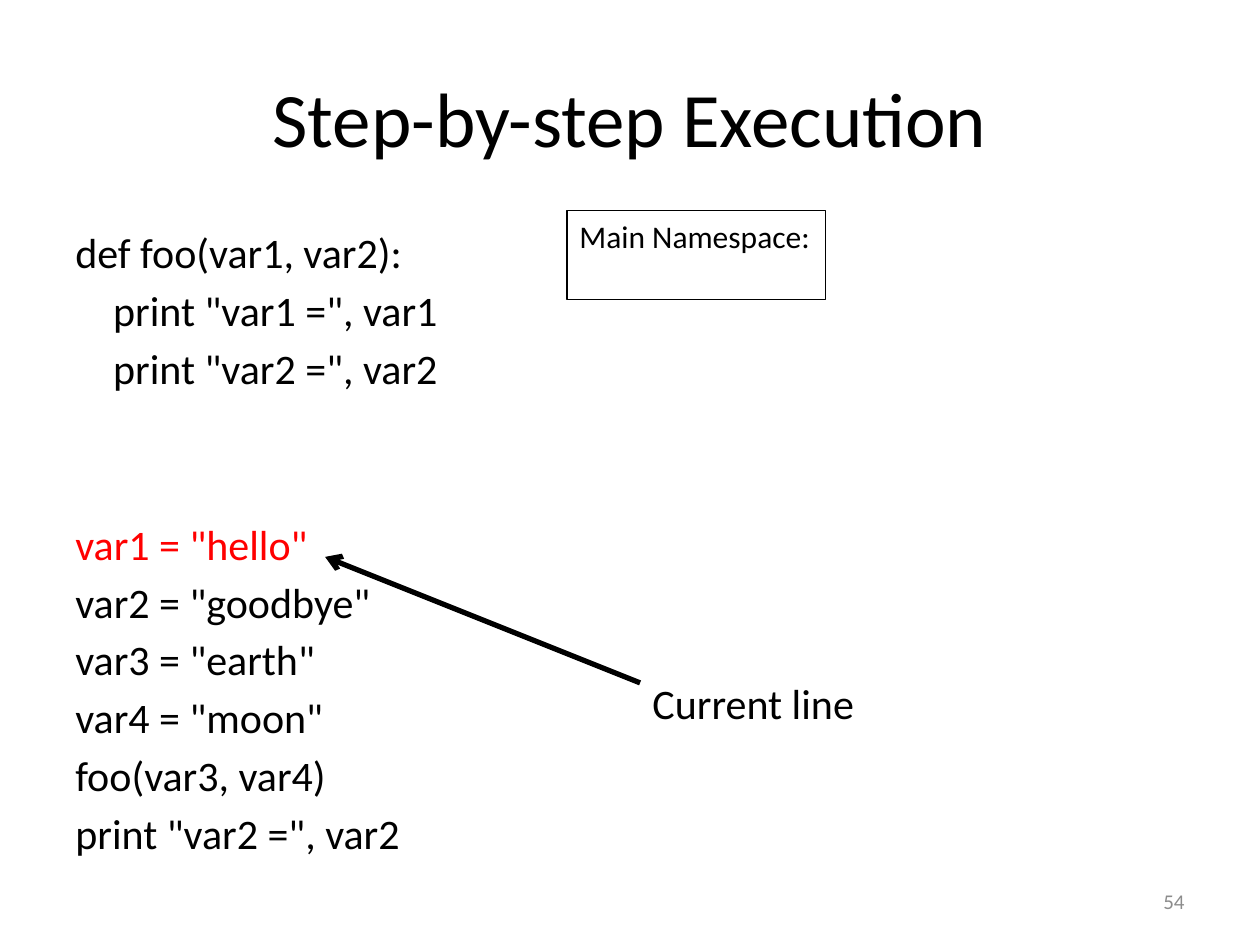
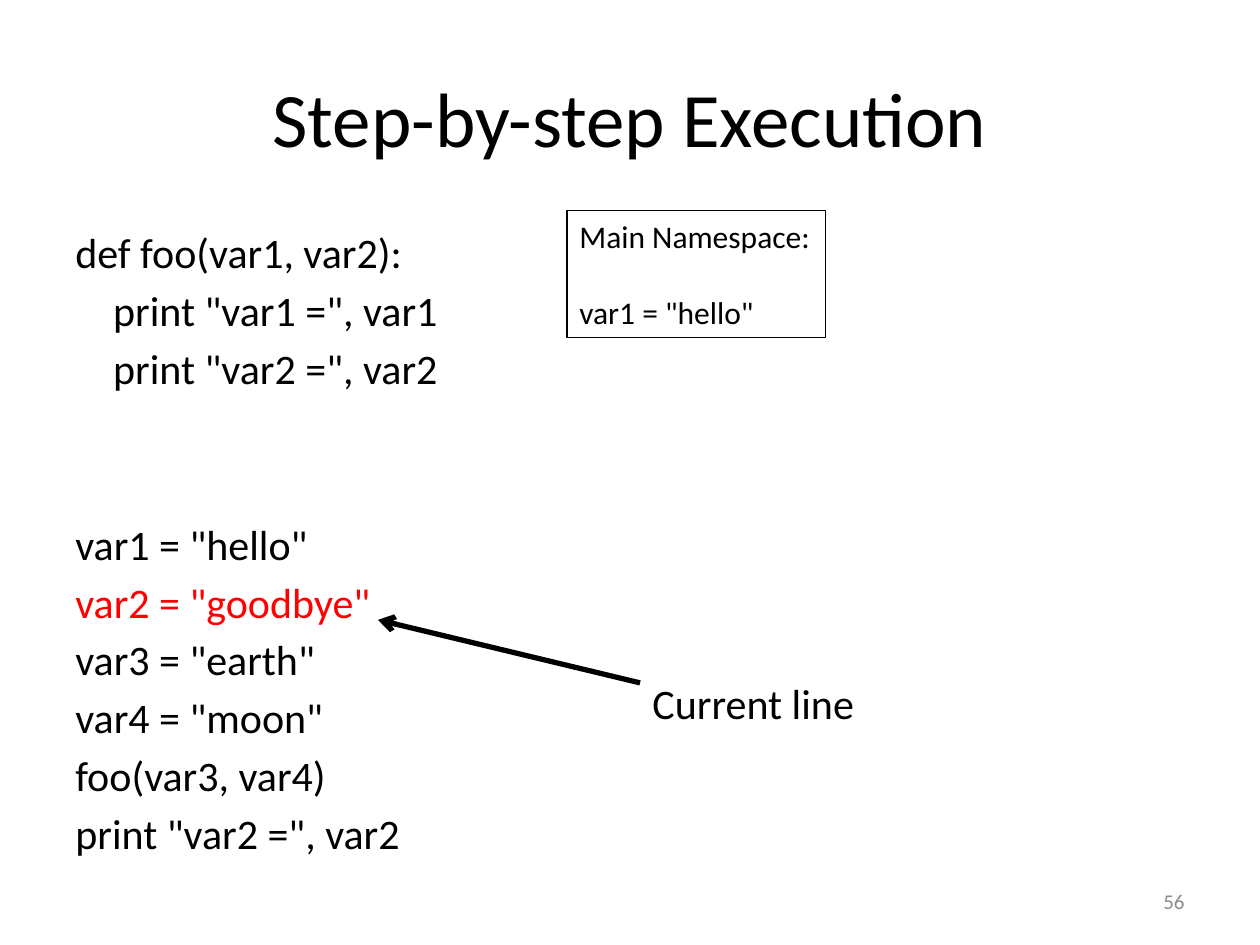
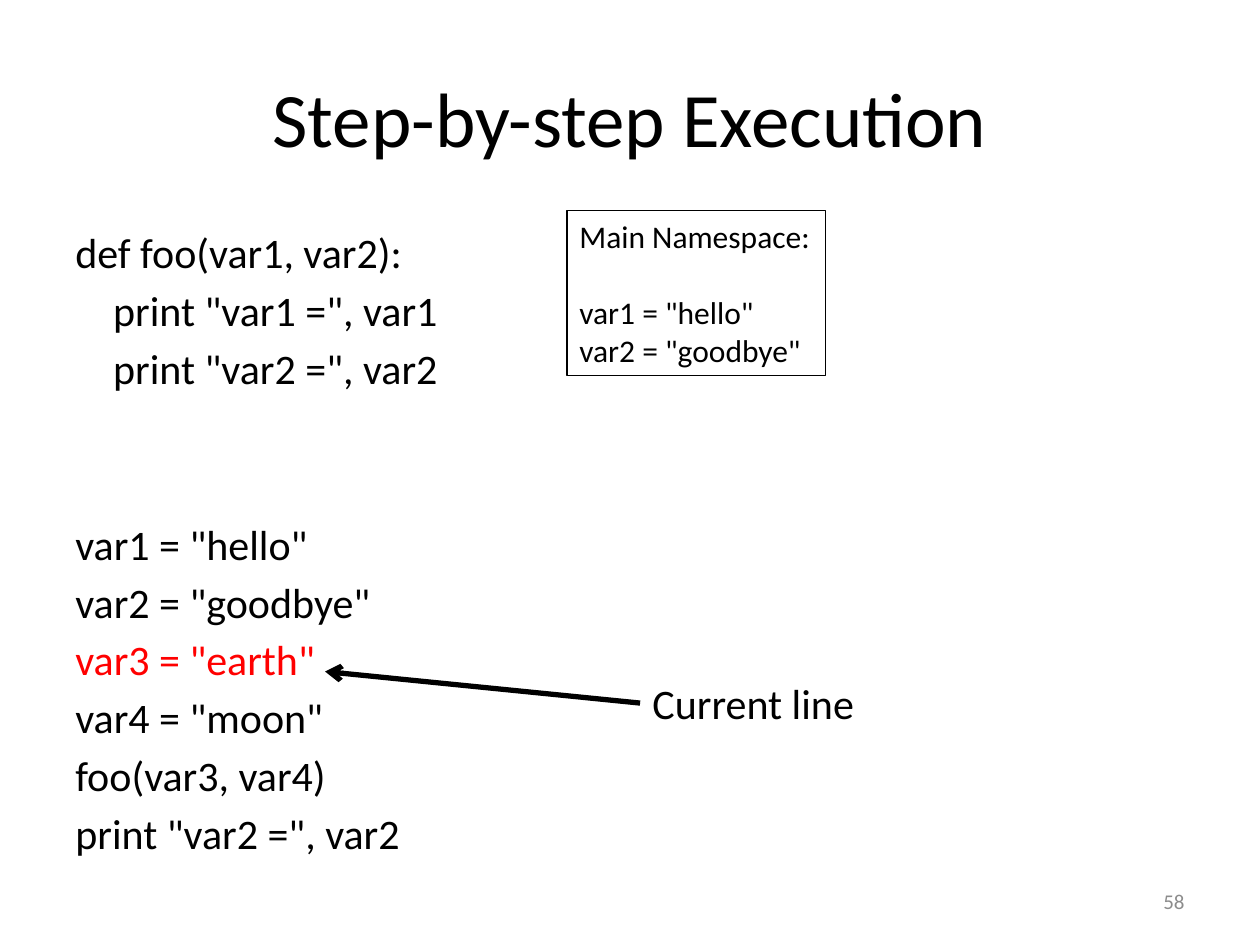
"""Build three slides that trace a short program line by line."""
from dataclasses import dataclass

from lxml import etree
from pptx import Presentation
from pptx.dml.color import RGBColor
from pptx.enum.shapes import MSO_CONNECTOR, MSO_SHAPE
from pptx.enum.text import MSO_ANCHOR, PP_ALIGN
from pptx.oxml.ns import qn
from pptx.shapes.base import BaseShape
from pptx.slide import Slide
from pptx.util import Inches, Pt

LEFT, CENTER, RIGHT = PP_ALIGN.LEFT, PP_ALIGN.CENTER, PP_ALIGN.RIGHT
TOP, MIDDLE = MSO_ANCHOR.TOP, MSO_ANCHOR.MIDDLE
RECT = MSO_SHAPE.RECTANGLE
STRAIGHT = MSO_CONNECTOR.STRAIGHT

COLORS = {"ink": "000000", "mark": "FF0000", "page": "8C8C8C"}
FONT = "Calibri"
GAP = 4.3
PITCH = 33.6


@dataclass(frozen=True)
class Line:
    text: str
    color: str = "ink"
    before: float = 0
    after: float = 0
    indent: float = 0


@dataclass(frozen=True)
class Block:
    at: tuple[float, float, float, float]
    size: int
    align: PP_ALIGN = LEFT
    anchor: MSO_ANCHOR = TOP
    wrap: bool = True


@dataclass(frozen=True)
class Step:
    page: int
    line: int
    names: tuple[str, ...]
    tip: tuple[float, float]
    joined: bool = False


TITLE = Block((0.5, 0.3, 9, 1.25), 44, CENTER, MIDDLE)
CODE = Block((0.5, 1.75, 9, 4.95), 24)
PAGE = Block((7.17, 6.95, 2.33, 0.4), 12, RIGHT, MIDDLE)
LABEL = Block((5.08, 5.33, 1.82, 0.5), 24, wrap=False)
START = (5.08, 5.42)

SOURCE = (
    Line("def foo(var1, var2):", before=GAP),
    Line('print "var1 =", var1', before=GAP, indent=0.3),
    Line('print "var2 =", var2', before=GAP, indent=0.3),
    Line('var1 = "hello"', before=GAP + 2 * PITCH),
    Line('var2 = "goodbye"', before=GAP),
    Line('var3 = "earth"', before=GAP),
    Line('var4 = "moon"', before=GAP),
    Line("foo(var3, var4)", before=GAP),
    Line('print "var2 =", var2', before=GAP),
)

STEPS = (
    Step(54, 3, (), (2.58, 4.42)),
    Step(56, 4, ('var1 = "hello"',), (3, 4.92)),
    Step(58, 5, ('var1 = "hello"', 'var2 = "goodbye"'), (2.58, 5.33), True),
)


def paint(name: str) -> RGBColor:
    """Return a named colour."""
    return RGBColor.from_string(COLORS[name])


def apply(target: object, values: dict[str, object]) -> None:
    """Set each format value on the target."""
    for name, value in values.items():
        setattr(target, name, value)


def write(shape: BaseShape, block: Block, lines: list[Line]) -> None:
    """Fill a shape with styled lines."""
    frame = shape.text_frame
    apply(frame, {"word_wrap": block.wrap, "vertical_anchor": block.anchor})
    for i, line in enumerate(lines):
        para = frame.paragraphs[0] if i == 0 else frame.add_paragraph()
        apply(para, {
            "alignment": block.align,
            "space_before": Pt(line.before),
            "space_after": Pt(line.after),
        })
        if line.indent:
            para._p.get_or_add_pPr().set("marL", str(Inches(line.indent)))
        run = para.add_run()
        run.text = line.text
        apply(run.font, {"name": FONT, "size": Pt(block.size)})
        run.font.color.rgb = paint(line.color)


def put(slide: Slide, block: Block, lines: list[Line]) -> BaseShape:
    """Add a text box."""
    box = slide.shapes.add_textbox(*map(Inches, block.at))
    write(box, block, lines)
    return box


def frame_names(slide: Slide, names: tuple[str, ...]) -> None:
    """Add the outlined box that lists the namespace."""
    rows = max(2, len(names) + 2)
    block = Block((4.5, 1.67, 2.05, 0.11 + 0.3 * rows), 18)
    box = slide.shapes.add_shape(RECT, *map(Inches, block.at))
    box.shadow.inherit = False
    box.fill.background()
    box.line.color.rgb = paint("ink")
    box.line.width = Pt(0.75)
    head = Line("Main Namespace:", after=22)
    write(box, block, [head, *map(Line, names)])


def point(slide: Slide, step: Step, label: BaseShape) -> None:
    """Draw the arrow from the label to the current line."""
    ends = map(Inches, (*START, *step.tip))
    arrow = slide.shapes.add_connector(STRAIGHT, *ends)
    if step.joined:
        arrow.begin_connect(label, 1)
    arrow.line.color.rgb = paint("ink")
    arrow.line.width = Pt(3)
    tail = etree.SubElement(arrow.line._get_or_add_ln(), qn("a:tailEnd"))
    tail.set("type", "arrow")
    etree.SubElement(arrow._element.spPr, qn("a:effectLst"))


def build(slide: Slide, step: Step) -> None:
    """Draw one step of the run."""
    put(slide, TITLE, [Line("Step-by-step Execution")])
    code = [
        Line(row.text, "mark" if i == step.line else "ink",
             row.before, row.after, row.indent)
        for i, row in enumerate(SOURCE)
    ]
    put(slide, CODE, code)
    put(slide, PAGE, [Line(str(step.page), "page")])
    label = put(slide, LABEL, [Line("Current line")])
    frame_names(slide, step.names)
    point(slide, step, label)


def main() -> None:
    """Build and save the deck."""
    deck = Presentation()
    apply(deck, {"slide_width": Inches(10), "slide_height": Inches(7.5)})
    for step in STEPS:
        build(deck.slides.add_slide(deck.slide_layouts[6]), step)
    deck.save("out.pptx")


if __name__ == "__main__":
    main()
